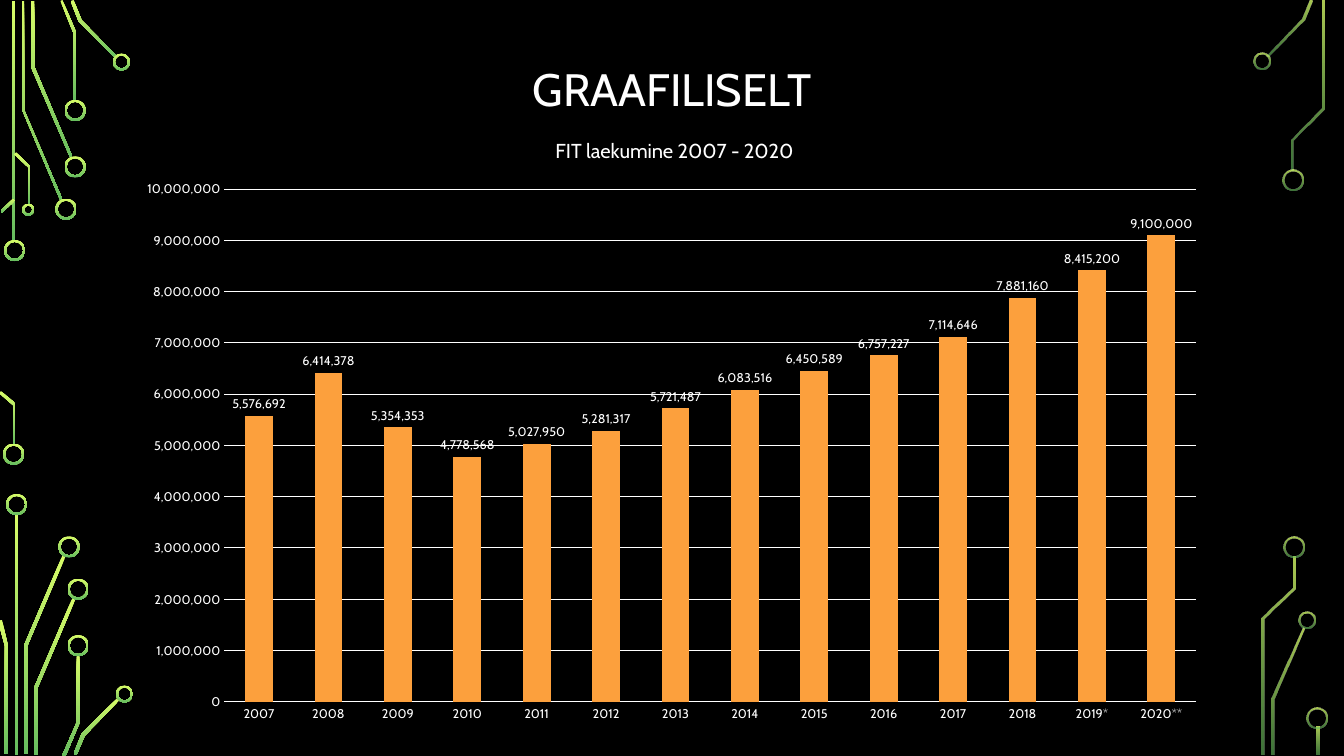
from lxml import etree
from pptx import Presentation
from pptx.chart.data import CategoryChartData
from pptx.dml.color import RGBColor
from pptx.enum.chart import XL_CHART_TYPE, XL_LABEL_POSITION, XL_TICK_MARK
from pptx.enum.shapes import MSO_SHAPE
from pptx.enum.text import MSO_ANCHOR, PP_ALIGN
from pptx.oxml import parse_xml
from pptx.oxml.ns import nsdecls, qn
from pptx.util import Pt

PX = 9144
BARS = XL_CHART_TYPE.COLUMN_CLUSTERED
OUTSIDE = XL_LABEL_POSITION.OUTSIDE_END
NO_TICK = XL_TICK_MARK.NONE
RECT, DONUT = MSO_SHAPE.RECTANGLE, MSO_SHAPE.DONUT
MIDDLE, CENTER = MSO_ANCHOR.MIDDLE, PP_ALIGN.CENTER
FONT, WHITE, BLACK, ORANGE = "Cabin", "FFFFFF", "000000", "FCA03D"
LIME, GREEN = "D8FC68", "66BD5F"
RIM = 2

# Opacity in percent at the top and bottom of each trace
LEFT_FADE, RIGHT_FADE = (100, 100), (80, 60)

# Left, top, width, height
LEFT_RODS = [(12, 1, 3, 239), (15, 510, 3, 239)]
RIGHT_RODS = [(1306, 721, 3, 28)]

# Left, top, diameter
LEFT_RINGS = [
    (4, 238, 21), (3, 440, 21), (55, 197, 21), (64, 155, 21), (64, 99, 21),
    (112, 53, 17), (22, 202, 12), (6, 490, 21), (58, 532, 21),
    (67, 574, 21), (67, 630, 21), (115, 680, 17),
]
RIGHT_RINGS = [
    (1243, 52, 17), (1272, 168, 21), (1288, 607, 17),
    (1273, 532, 21), (1296, 702, 21),
]

LEFT_TRACES = [
    [(60, 199), (22, 109), (22, 1), (24, 1), (24, 109), (62, 198)],
    [(70, 157), (31, 67), (31, 1), (34, 1), (34, 66), (72, 156)],
    [(76, 100), (73, 100), (73, 33), (60, 1), (62, 0), (76, 33)],
    [(115, 58), (78, 21), (70, 1), (73, 0), (81, 20), (116, 56)],
    [(2, 211), (1, 209), (13, 197), (15, 199)],
    [(15, 441), (13, 441), (13, 402), (-1, 390), (1, 388), (15, 400)],
    [(30, 203), (28, 203), (28, 166), (14, 153), (16, 151), (30, 165)],
    [(27, 748), (24, 748), (24, 640), (62, 551), (65, 552), (27, 641)],
    [(8, 748), (5, 748), (5, 641), (-2, 616), (2, 615), (8, 641)],
    [(37, 749), (34, 749), (34, 682), (72, 593), (75, 594), (37, 683)],
    [(65, 750), (62, 749), (76, 717), (76, 650), (79, 650), (79, 717)],
    [(76, 749), (73, 748), (81, 728), (117, 692), (119, 694), (84, 730)],
]
RIGHT_TRACES = [
    [(1258, 56), (1256, 55), (1291, 19), (1299, 0), (1302, 1), (1294, 20)],
    [(1264, 749), (1261, 749), (1261, 693), (1292, 623), (1294, 624),
     (1264, 694)],
    [(1283, 169), (1281, 169), (1281, 138), (1311, 107), (1311, 1),
     (1314, 1), (1314, 108), (1283, 139)],
    [(1254, 749), (1251, 749), (1251, 613), (1282, 583), (1282, 552),
     (1285, 552), (1285, 584), (1254, 614)],
]

YEARS = [str(year) for year in range(2007, 2019)] + ["2019*", "2020**"]
SUMS = [5576692, 6414378, 5354353, 4778568, 5027950, 5281317, 5721487,
        6083516, 6450589, 6757227, 7114646, 7881160, 8415200, 9100000]


def color(code):
    return RGBColor.from_string(code)


def style(font, size):
    look = {"name": FONT, "size": Pt(size), "bold": False}
    for key, value in look.items():
        setattr(font, key, value)
    font.color.rgb = color(WHITE)


def glow(shape, fade):
    """Fill with the lime to green blend at the given opacities."""
    shape.shadow.inherit = False
    shape.line.fill.background()
    shape.fill.gradient()
    shape.fill.gradient_angle = 270
    for stop, code, part in zip(shape.fill.gradient_stops, (LIME, GREEN), fade):
        stop.color.rgb = color(code)
    for tint, part in zip(shape.element.spPr.iter(qn("a:srgbClr")), fade):
        if part < 100:
            etree.SubElement(tint, qn("a:alpha")).set("val", str(part * 1000))


def add_box(shapes, kind, box, fade):
    shape = shapes.add_shape(kind, *(n * PX for n in box))
    glow(shape, fade)
    return shape


def add_ring(shapes, left, top, size, fade):
    ring = add_box(shapes, DONUT, (left, top, size, size), fade)
    ring.adjustments[0] = RIM / size


def add_trace(shapes, points, fade):
    path = shapes.build_freeform(*points[0], scale=PX)
    path.add_line_segments(points[1:], close=True)
    glow(path.convert_to_shape(), fade)


def add_board(shapes, rods, rings, traces, fade):
    for rod in rods:
        add_box(shapes, RECT, rod, fade)
    for points in traces:
        add_trace(shapes, points, fade)
    for ring in rings:
        add_ring(shapes, *ring, fade)


def add_title(shapes, text, box):
    frame = shapes.add_textbox(*(n * PX for n in box)).text_frame
    frame.word_wrap = True
    frame.vertical_anchor = MIDDLE
    line = frame.paragraphs[0]
    line.text = text
    line.alignment = CENTER
    line.line_spacing = 0.9
    style(line.font, 32.4)


def place(parent, after, spots):
    """Pin a chart part at fractions of the chart area."""
    for old in parent.findall(qn("c:layout")):
        parent.remove(old)
    marks = "".join(f'<c:{key} val="{val}"/>' for key, val in spots.items())
    layout = parse_xml(f'<c:layout {nsdecls("c")}><c:manualLayout>{marks}'
                       "</c:manualLayout></c:layout>")
    if after is None:
        parent.insert(0, layout)
    else:
        after.addnext(layout)


def add_chart(shapes, box):
    data = CategoryChartData(number_format="#,##0")
    data.categories = YEARS
    data.add_series("Series 1", SUMS)
    chart = shapes.add_chart(BARS, *(n * PX for n in box), data).chart
    chart.has_legend = False
    style(chart.font, 10)
    title = chart.chart_title
    title.text_frame.text = "FIT laekumine 2007 - 2020"
    style(title.text_frame.paragraphs[0].runs[0].font, 14.4)
    title.include_in_layout = False

    for axis in (chart.category_axis, chart.value_axis):
        axis.major_tick_mark = axis.minor_tick_mark = NO_TICK
        axis.format.line.fill.background()
        style(axis.tick_labels.font, 9)
    scale = chart.value_axis
    for key, value in {"minimum_scale": 0, "maximum_scale": 10000000,
                       "major_unit": 1000000}.items():
        setattr(scale, key, value)
    scale.tick_labels.number_format = "#,##0"
    scale.tick_labels.number_format_is_linked = False
    grid = scale.major_gridlines.format.line
    grid.color.rgb = color(WHITE)
    grid.width = Pt(0.75)

    plot = chart.plots[0]
    plot.gap_width = 150
    plot.vary_by_categories = False
    fill = plot.series[0].format.fill
    fill.solid()
    fill.fore_color.rgb = color(ORANGE)
    labels = plot.series[0].data_labels
    for key, value in {"show_value": True, "number_format": "#,##0",
                       "number_format_is_linked": False,
                       "position": OUTSIDE}.items():
        setattr(labels, key, value)
    style(labels.font, 9)

    area = chart.element.chart.plotArea
    place(area, None, {"layoutTarget": "inner", "xMode": "edge",
                       "yMode": "edge", "x": 0.09, "y": 0.12,
                       "w": 0.89, "h": 0.83})
    head = chart.element.chart.find(qn("c:title"))
    place(head, head.find(qn("c:tx")), {"xMode": "edge", "yMode": "edge",
                                        "x": 0.39, "y": 0.03})


def main():
    deck = Presentation()
    deck.slide_width, deck.slide_height = 1333 * PX, 750 * PX
    slide = deck.slides.add_slide(deck.slide_layouts[6])
    back = slide.background.fill
    back.solid()
    back.fore_color.rgb = color(BLACK)
    shapes = slide.shapes
    add_board(shapes, LEFT_RODS, LEFT_RINGS, LEFT_TRACES, LEFT_FADE)
    add_board(shapes, RIGHT_RODS, RIGHT_RINGS, RIGHT_TRACES, RIGHT_FADE)
    add_title(shapes, "GRAAFILISELT", (125, 68, 1083, 47))
    add_chart(shapes, (125, 114, 1083, 613))
    deck.save("out.pptx")


if __name__ == "__main__":
    main()
